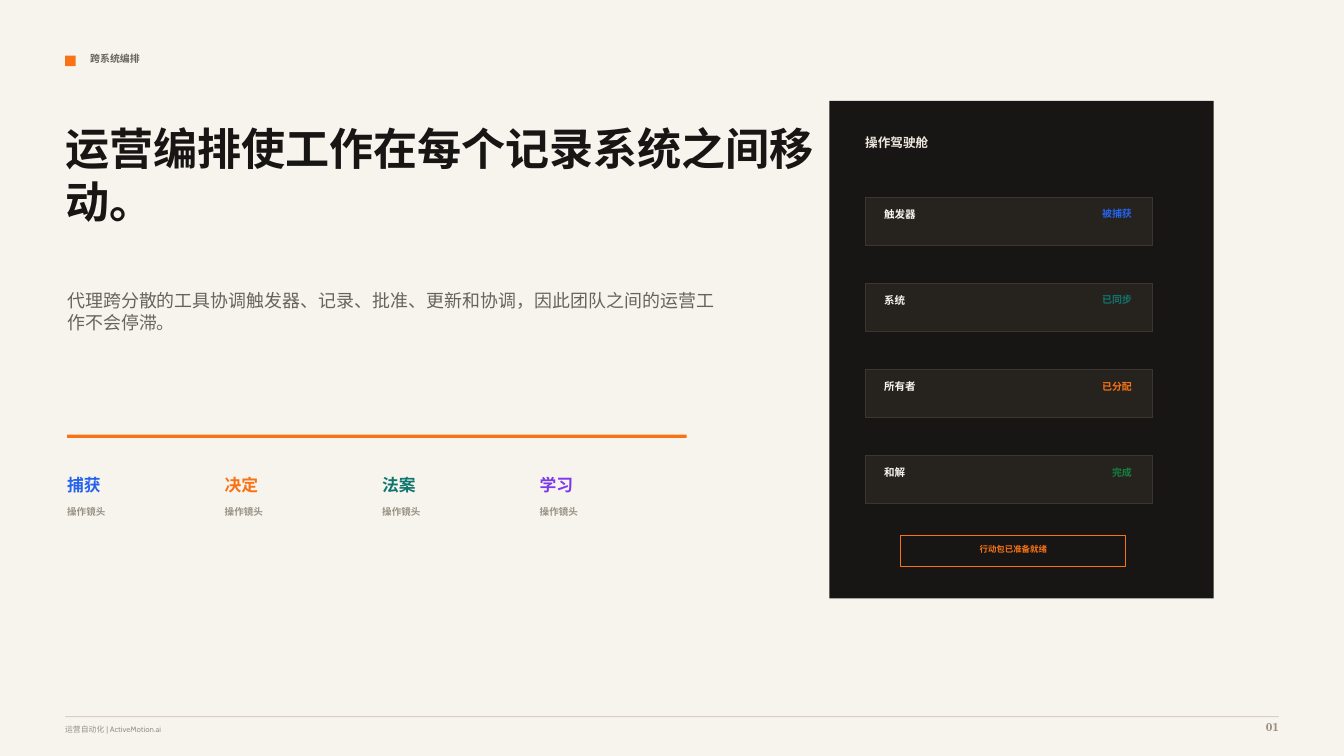
from pptx import Presentation
from pptx.dml.color import RGBColor
from pptx.enum.shapes import MSO_SHAPE
from pptx.enum.text import PP_ALIGN
from pptx.util import Pt

RECTANGLE = MSO_SHAPE.RECTANGLE
LEFT, CENTER, RIGHT = PP_ALIGN.LEFT, PP_ALIGN.CENTER, PP_ALIGN.RIGHT

PX = 9525  # EMU per px, 96 px to the inch
SANS, SERIF = "Cabin", "TeX Gyre Schola"
PAPER, INK, GRAY, MUTED = "F7F4EE", "171614", "69635A", "9A9184"
ORANGE, BLUE, TEAL, PURPLE, GREEN = "F97316", "2563EB", "0F766E", "7C3AED", "15803D"

presentation = Presentation()
presentation.slide_width = 1280 * PX
presentation.slide_height = 720 * PX
slide = presentation.slides.add_slide(presentation.slide_layouts[6])


def add_box(left, top, width, height, fill=None, line=None):
    shape = slide.shapes.add_shape(RECTANGLE, left * PX, top * PX, width * PX, height * PX)
    shape.shadow.inherit = False
    if fill:
        shape.fill.solid()
        shape.fill.fore_color.rgb = RGBColor.from_string(fill)
    else:
        shape.fill.background()
    if line:
        shape.line.color.rgb = RGBColor.from_string(line)
        shape.line.width = Pt(0.75)
    else:
        shape.line.fill.background()


def add_text(left, top, width, height, text, size, color, font=SANS, bold=True, align=LEFT):
    text_box = slide.shapes.add_textbox(left * PX, top * PX, width * PX, height * PX)
    frame = text_box.text_frame
    frame.word_wrap = True
    frame.margin_left = frame.margin_top = frame.margin_right = frame.margin_bottom = 0
    frame.text = text
    paragraph = frame.paragraphs[0]
    paragraph.alignment = align
    run_font = paragraph.runs[0].font
    run_font.name = font
    run_font.size = Pt(size)
    run_font.bold = bold
    run_font.color.rgb = RGBColor.from_string(color)


# Background and section label
add_box(0, 0, 1280, 720, PAPER)
add_box(62, 53, 10, 10, ORANGE)
add_text(86, 50, 620, 18, "跨系统编排", 7.1, GRAY)

# Title and summary
add_text(62, 116, 740, 126, "运营编排使工作在每个记录系统之间移动。", 31.5, INK, SERIF)
add_text(64, 276, 620, 88,
         "代理跨分散的工具协调触发器、记录、批准、更新和协调，因此团队之间的运营工作不会停滞。",
         12.8, GRAY, bold=False)

# Four stages under the rule
add_box(64, 414, 590, 3, ORANGE)
stages = [("捕获", BLUE), ("决定", ORANGE), ("法案", TEAL), ("学习", PURPLE)]
for index, (stage, color) in enumerate(stages):
    left = 64 + 150 * index
    add_text(left, 452, 120, 20, stage, 12, color, SERIF)
    add_text(left, 482, 120, 16, "操作镜头", 6.8, MUTED)

# Cockpit panel with status rows
add_box(790, 96, 366, 474, INK)
add_text(824, 128, 220, 24, "操作驾驶舱", 9, "EDE7DD")
status_rows = [
    ("触发器", "被捕获", BLUE),
    ("系统", "已同步", TEAL),
    ("所有者", "已分配", ORANGE),
    ("和解", "完成", GREEN),
]
for index, (label, status, color) in enumerate(status_rows):
    top = 188 + 82 * index
    add_box(824, top, 274, 46, "26231F", "3C362E")
    add_text(842, top + 10, 130, 16, label, 7.5, PAPER)
    add_text(982, top + 10, 96, 16, status, 7.1, color, align=RIGHT)

# Ready badge
add_box(858, 510, 214, 30, line=ORANGE)
add_text(870, 518, 190, 13, "行动包已准备就绪", 6, ORANGE, align=CENTER)

# Footer
add_box(62, 682, 1156, 1, "D9D0C3")
add_text(62, 690, 760, 14, "运营自动化 | ActiveMotion.ai", 5.6, MUTED, bold=False)
add_text(1170, 686, 48, 18, "01", 8.2, MUTED, SERIF, align=RIGHT)

presentation.save("out.pptx")
